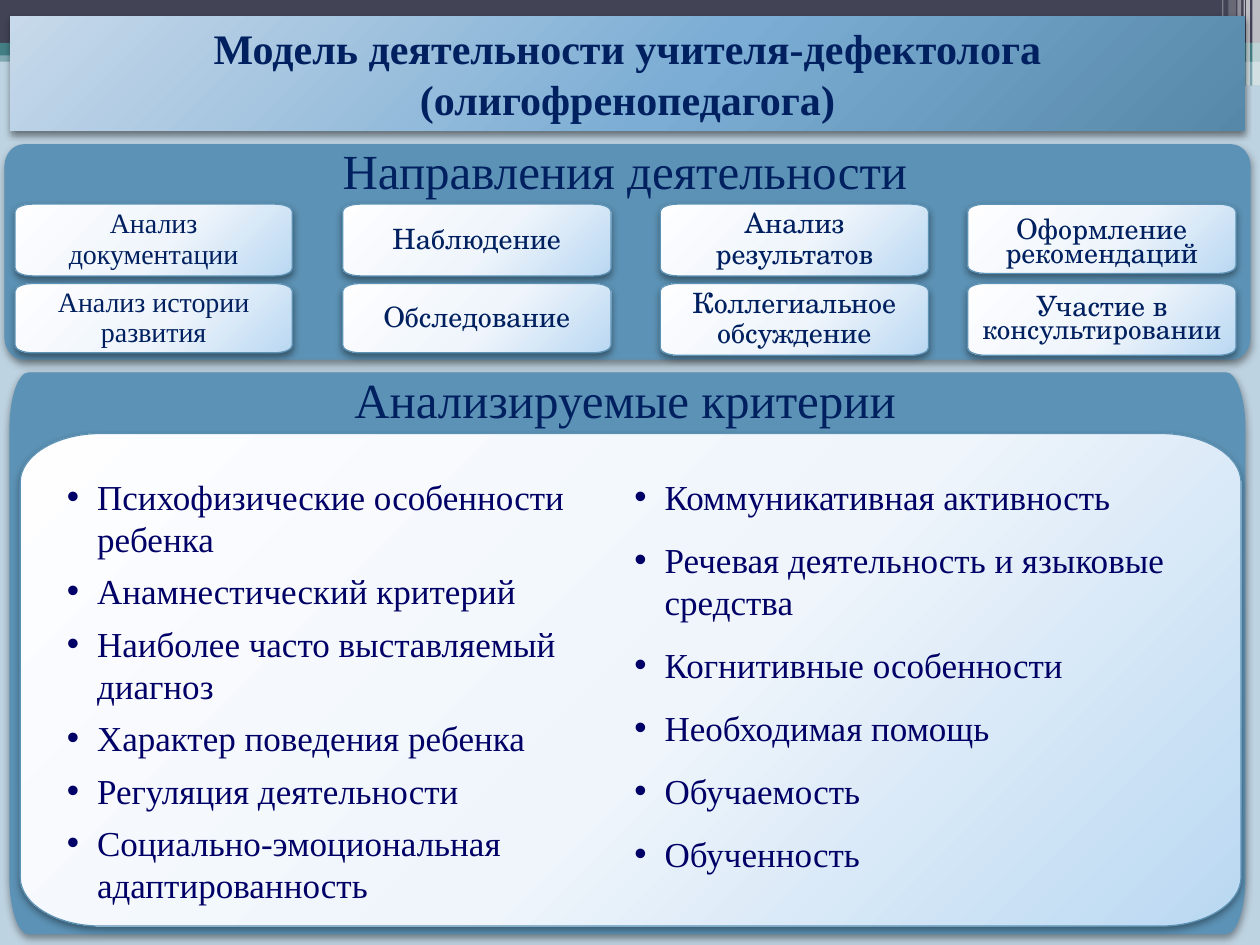
from dataclasses import dataclass

from lxml import etree
from pptx import Presentation
from pptx.dml.color import RGBColor
from pptx.enum.shapes import MSO_SHAPE as Preset
from pptx.enum.text import MSO_ANCHOR as Anchor, MSO_AUTO_SIZE as AutoSize, PP_ALIGN as Align
from pptx.oxml.ns import qn
from pptx.slide import Slide
from pptx.util import Inches, Pt

BACKGROUND = RGBColor(0xBE, 0xD3, 0xE1)
SLATE = RGBColor(0x42, 0x44, 0x56)
TEAL = RGBColor(0x43, 0x80, 0x86)
WHITE = RGBColor(0xFF, 0xFF, 0xFF)
BLACK = RGBColor(0x00, 0x00, 0x00)
PANEL = RGBColor(0x5C, 0x92, 0xB5)
NAVY = RGBColor(0x00, 0x20, 0x60)
LIST_BLUE = RGBColor(0x00, 0x00, 0x66)
TITLE_STOPS = [(0, RGBColor(0xC7, 0xD9, 0xEA)), (55, RGBColor(0x7C, 0xAD, 0xD4)),
               (100, RGBColor(0x56, 0x88, 0xA9))]
CARD_STOPS = [(0, RGBColor(0xFE, 0xFE, 0xFF)), (55, RGBColor(0xEF, 0xF5, 0xFB)),
              (100, RGBColor(0xBA, 0xD8, 0xF2))]
SERIF = "Times New Roman"
SCHOLA = "TeX Gyre Schola"
ARC = 0.55  # Bezier handle length for a quarter ellipse

# Top band: left, top, width, height, colour, opacity in percent
BANDS = [
    (0, 0.4, 10, 0.09, TEAL, 50), (0, 0, 10, 0.34, SLATE, 100), (0, 0.34, 10, 0.1, TEAL, 100),
    (5.92, 0.39, 4.08, 0.1, TEAL, 100), (5.92, 0.48, 4.08, 0.2, TEAL, 50),
]
PILLS = [(5.91, 0.54, 3.35, 0.03, BACKGROUND, 100), (8.06, 0.64, 1.75, 0.04, BACKGROUND, 100)]
STRIPES = [(9.94, 0.06, 0.68, 65), (9.89, 0.03, 0.68, 65), (9.87, 0.01, 0.68, 60),
           (9.82, 0.03, 0.68, 40), (9.75, 0.06, 0.64, 20), (9.7, 0.01, 0.64, 30)]

# Card columns: left, width, font, line spacing, then (height, top inset, text runs) by row
CARD_TOPS = (1.62, 2.25)
CARD_COLUMNS = [
    (0.12, 2.2, SERIF, 0.9, [(0.57, 0.12, [("Анализ документации", 16)]),
                             (0.55, 0.12, [("Анализ истории развития", 16)])]),
    (2.72, 2.13, SCHOLA, 0.9, [(0.57, 0.12, [("Наблюдение", 16)]),
                               (0.55, 0.12, [("Обследование", 16)])]),
    (5.24, 2.13, SCHOLA, 0.9, [(0.57, 0.12, [("Анализ результатов", 16)]),
                               (0.57, 0.12, [("Коллегиальное обсуждение", 16)])]),
    (7.68, 2.13, SCHOLA, 0.7, [(0.55, 0.21, [("Оформление рекомендаций", 16)]),
                               (0.57, 0.14, [("Участие в ", 16), ("консультировании", 15.5)])]),
]

LEFT_CRITERIA = [
    "Психофизические особенности ребенка", "Анамнестический критерий",
    "Наиболее часто выставляемый диагноз", "Характер поведения ребенка",
    "Регуляция деятельности", "Социально-эмоциональная адаптированность",
]
RIGHT_CRITERIA = [
    "Коммуникативная активность", "Речевая деятельность и языковые средства",
    "Когнитивные особенности", "Необходимая помощь", "Обучаемость", "Обученность",
]


def write(paragraph, text, font=SERIF, size=16, color=NAVY, bold=False, align=Align.CENTER,
          spacing=1.0, before=0, after=0):
    paragraph.alignment = align
    paragraph.line_spacing = spacing
    paragraph.space_before, paragraph.space_after = Pt(before), Pt(after)
    run = paragraph.add_run()
    run.text = text
    run.font.name, run.font.size = font, Pt(size)
    run.font.bold, run.font.color.rgb = bold, color


def add_xml(parent, tag, **attributes):
    return etree.SubElement(parent, qn(tag), {key: str(value) for key, value in attributes.items()})


def round_corners(shape):
    """Turn every second segment of an eight-point outline into a quarter ellipse."""
    outline = next(shape._element.iter(qn("a:path")))
    points = [(int(point.get("x")), int(point.get("y"))) for point in outline.iter(qn("a:pt"))]
    width, height = shape.width, shape.height
    corners = [(0, 0), (width, 0), (width, height), (0, height)]
    for index, corner in enumerate(corners):
        start, end = points[2 * index:2 * index + 2]
        handles = [tuple(round(a + ARC * (c - a)) for a, c in zip(point, corner))
                   for point in (start, end)]
        curve = etree.Element(qn("a:cubicBezTo"))
        for x, y in (*handles, end):
            add_xml(curve, "a:pt", x=x, y=y)
        outline.replace(outline[2 * index + 1], curve)


@dataclass
class SlideBuilder:
    slide: Slide
    line_width: float = 0.75

    def place(self, shape, left, top, width, height):
        shape.left, shape.top = Inches(left), Inches(top)
        shape.width, shape.height = Inches(width), Inches(height)
        self.slide.shapes._spTree.append(shape._element)  # bring to front

    def frame(self, shape, anchor=Anchor.TOP):
        text_frame = shape.text_frame
        text_frame.word_wrap = True
        text_frame.auto_size = AutoSize.NONE
        text_frame.vertical_anchor = anchor
        return text_frame

    def gradient(self, shape, stops):
        shape.fill.gradient()
        gradient = shape._element.spPr.find(qn("a:gradFill"))
        for child in list(gradient):
            gradient.remove(child)
        stop_list = add_xml(gradient, "a:gsLst")
        for position, color in stops:
            add_xml(add_xml(stop_list, "a:gs", pos=position * 1000), "a:srgbClr", val=color)
        circle = add_xml(gradient, "a:path", path="circle")
        add_xml(circle, "a:fillToRect", l=-40000, t=-90000, r=140000, b=190000)

    def shadow(self, shape, opacity, blur):
        shape.shadow.inherit = False
        effects = shape._element.spPr.find(qn("a:effectLst"))
        outer = add_xml(effects, "a:outerShdw", blurRad=Pt(blur), dist=Pt(2), dir=5400000,
                        rotWithShape=0)
        add_xml(add_xml(outer, "a:srgbClr", val=BLACK), "a:alpha", val=opacity * 1000)

    def band(self, left, top, width, height, color, opacity, preset=Preset.RECTANGLE):
        shape = self.slide.shapes.add_shape(preset, Inches(left), Inches(top),
                                            Inches(width), Inches(height))
        shape.shadow.inherit = False
        shape.line.fill.background()
        shape.fill.solid()
        shape.fill.fore_color.rgb = color
        if opacity < 100:
            color_element = shape._element.spPr.find(qn("a:solidFill"))[0]
            add_xml(color_element, "a:alpha", val=opacity * 1000)

    def panel(self, left, top, width, height, radius_x, radius_y, stops=None):
        """Rectangle with elliptical corners."""
        right, bottom = left + width, top + height
        inner_left, inner_right = left + radius_x, right - radius_x
        inner_top, inner_bottom = top + radius_y, bottom - radius_y
        points = [(Inches(x), Inches(y)) for x, y in (
            (left, inner_top), (inner_left, top), (inner_right, top), (right, inner_top),
            (right, inner_bottom), (inner_right, bottom), (inner_left, bottom),
            (left, inner_bottom))]
        builder = self.slide.shapes.build_freeform(*points[0])
        builder.add_line_segments(points[1:], close=True)
        shape = builder.convert_to_shape()
        round_corners(shape)
        if stops:
            self.gradient(shape, stops)
        else:
            shape.fill.solid()
            shape.fill.fore_color.rgb = PANEL
        shape.line.color.rgb = PANEL
        shape.line.width = Pt(self.line_width)
        self.shadow(shape, 40, 4.1)
        return shape

    def card(self, runs, left, top, width, height, font, spacing, inset_top):
        shape = self.panel(left, top, width, height, 0.14, 0.06, CARD_STOPS)
        text_frame = self.frame(shape, Anchor.MIDDLE)
        text_frame.margin_left = text_frame.margin_right = Inches(0.11)
        text_frame.margin_top, text_frame.margin_bottom = Inches(inset_top), Inches(0.12)
        for text, size in runs:
            write(text_frame.paragraphs[0], text, font=font, size=size, spacing=spacing)

    def heading(self, text, left, top, width, height):
        shape = self.slide.shapes.add_textbox(Inches(left), Inches(top),
                                              Inches(width), Inches(height))
        write(self.frame(shape).paragraphs[0], text, size=28)

    def title(self, text, *box):
        shape = self.slide.shapes.title
        self.place(shape, *box)
        self.gradient(shape, TITLE_STOPS)
        self.shadow(shape, 45, 4)
        write(self.frame(shape).paragraphs[0], text, size=24, bold=True)

    def criteria(self, columns, *box):
        shape = self.slide.placeholders[1]
        self.place(shape, *box)
        text_frame = self.frame(shape)
        text_frame._txBody.bodyPr.set("numCol", str(len(columns)))
        items = [(text, after) for texts, after in columns for text in texts]
        for index, (text, after) in enumerate(items):
            paragraph = text_frame.add_paragraph() if index else text_frame.paragraphs[0]
            write(paragraph, text, size=20, color=LIST_BLUE, align=Align.LEFT,
                  before=6, after=after)
            properties = paragraph._p.get_or_add_pPr()
            properties.set("marL", str(Inches(0.24)))
            properties.set("indent", str(Inches(-0.24)))
            add_xml(properties, "a:buFont", typeface="Arial")
            add_xml(properties, "a:buChar", char="•")


def main():
    presentation = Presentation()
    presentation.slide_width, presentation.slide_height = Inches(10), Inches(7.5)
    slide = presentation.slides.add_slide(presentation.slide_layouts[1])
    slide.background.fill.solid()
    slide.background.fill.fore_color.rgb = BACKGROUND
    builder = SlideBuilder(slide)
    # Top decoration
    for band in BANDS:
        builder.band(*band)
    for pill in PILLS:
        builder.band(*pill, preset=Preset.ROUNDED_RECTANGLE)
    for left, width, height, opacity in STRIPES:
        builder.band(left, 0, width, height, WHITE, opacity)
    builder.title("Модель деятельности учителя-дефектолога (олигофренопедагога)",
                  0.08, 0.13, 9.8, 0.91)
    # Panels and their headings
    builder.panel(0.08, 2.96, 9.8, 4.45, 0.15, 0.45)
    builder.panel(0.04, 1.15, 9.88, 1.7, 0.15, 0.17)
    builder.panel(0.16, 3.44, 9.69, 3.91, 0.64, 0.39, CARD_STOPS)
    builder.heading("Направления деятельности", 1.06, 1.07, 7.8, 0.57)
    builder.heading("Анализируемые критерии", 2.32, 2.88, 5.28, 0.57)
    # Activity cards
    for left, width, font, spacing, cards in CARD_COLUMNS:
        for top, (height, inset_top, runs) in zip(CARD_TOPS, cards):
            builder.card(runs, left, top, width, height, font, spacing, inset_top)
    # Criteria in two columns
    builder.criteria([(LEFT_CRITERIA, 0), (RIGHT_CRITERIA, 6)], 0.43, 3.72, 9.21, 3.62)
    presentation.save("out.pptx")


if __name__ == "__main__":
    main()
